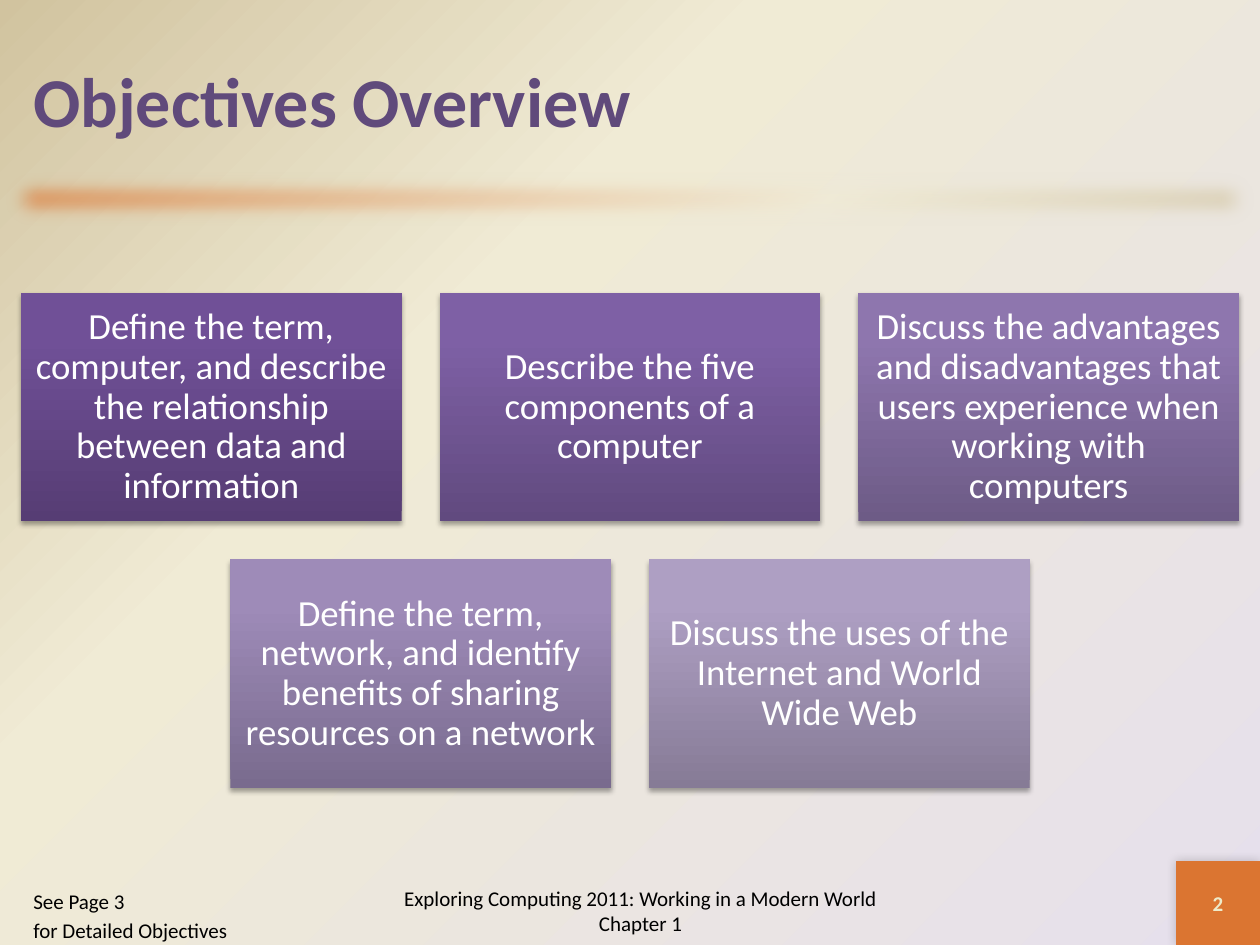
from lxml.etree import SubElement
from pptx import Presentation
from pptx.dml.color import RGBColor
from pptx.enum.shapes import MSO_SHAPE
from pptx.enum.text import MSO_ANCHOR, PP_ALIGN
from pptx.oxml.ns import qn
from pptx.util import Emu, Pt

EMU_PER_PX = 914400 / 126
FONT = "Calibri"

ORANGE = RGBColor(0xDB, 0x75, 0x31)
CREAM = RGBColor(0xF0, 0xEB, 0xD5)
TAN = RGBColor(0xD1, 0xC3, 0x9F)
LAVENDER = RGBColor(0xE6, 0xE0, 0xEC)
PURPLE = RGBColor(0x60, 0x4A, 0x7B)
PALE = RGBColor(0xEE, 0xEB, 0xCA)
WHITE = RGBColor(0xFF, 0xFF, 0xFF)
BLACK = RGBColor(0x00, 0x00, 0x00)

# Objective text with its gradient, bottom to top
OBJECTIVES = [
    ("Define the term, computer, and describe the relationship between data and information",
     (RGBColor(0x56, 0x3D, 0x74), RGBColor(0x70, 0x50, 0x97), RGBColor(0x70, 0x4F, 0x99))),
    ("Describe the five components of a computer",
     (RGBColor(0x61, 0x4A, 0x7F), RGBColor(0x7E, 0x60, 0xA5), RGBColor(0x7F, 0x60, 0xA7))),
    ("Discuss the advantages and disadvantages that users experience when working with computers",
     (RGBColor(0x6D, 0x5B, 0x86), RGBColor(0x8E, 0x76, 0xAE), RGBColor(0x8E, 0x75, 0xB0))),
    ("Define the term, network, and identify benefits of sharing resources on a network",
     (RGBColor(0x79, 0x6B, 0x8E), RGBColor(0x9E, 0x8B, 0xB8), RGBColor(0x9E, 0x8B, 0xBA))),
    ("Discuss the uses of the Internet and World Wide Web",
     (RGBColor(0x86, 0x7B, 0x96), RGBColor(0xAE, 0x9F, 0xC3), RGBColor(0xAE, 0x9F, 0xC4))),
]


def px(n):
    return Emu(round(n * EMU_PER_PX))


def set_gradient(fill, parent, colors, middle, angle=None):
    """Three-stop gradient: linear at an angle, or round from the bottom right corner."""
    fill.solid()
    solid = parent.find(qn("a:solidFill"))
    grad = parent.makeelement(qn("a:gradFill"), {"rotWithShape": "1"})
    stops = SubElement(grad, qn("a:gsLst"))
    for pos, color in zip((0, middle, 100), colors):
        gs = SubElement(stops, qn("a:gs"), pos=str(pos * 1000))
        SubElement(gs, qn("a:srgbClr"), val=str(color))
    if angle is None:
        focus = SubElement(grad, qn("a:path"), path="circle")
        SubElement(focus, qn("a:fillToRect"), l="100000", t="100000")
    else:
        SubElement(grad, qn("a:lin"), ang=str(angle * 60000), scaled="0")
    parent.replace(solid, grad)


def add_effect(sp, name, **attrs):
    effects = sp._element.spPr.find(qn("a:effectLst"))
    return SubElement(effects, qn(name), {k: str(v) for k, v in attrs.items()})


def add_shadow(sp, blur, dist, direction, opacity):
    shadow = add_effect(sp, "a:outerShdw", blurRad=Pt(blur), dist=Pt(dist),
                        dir=direction * 60000, rotWithShape=0)
    color = SubElement(shadow, qn("a:srgbClr"), val=str(BLACK))
    SubElement(color, qn("a:alpha"), val=str(opacity * 1000))


def add_rect(slide, x, y, w, h):
    sp = slide.shapes.add_shape(MSO_SHAPE.RECTANGLE, px(x), px(y), px(w), px(h))
    sp.shadow.inherit = False
    sp.line.fill.background()
    return sp


def set_text(sp, lines, size, color, bold=False, align=PP_ALIGN.LEFT,
             anchor=MSO_ANCHOR.MIDDLE):
    tf = sp.text_frame
    tf.word_wrap = True
    tf.vertical_anchor = anchor
    tf.text = "\n".join(lines)
    for p in tf.paragraphs:
        p.alignment = align
        p.font.name = FONT
        p.font.size = Pt(size)
        p.font.bold = bold
        p.font.color.rgb = color
    return tf


def add_label(slide, x, y, w, h, lines, size, color, **style):
    box = slide.shapes.add_textbox(px(x), px(y), px(w), px(h))
    return set_text(box, lines, size, color, **style)


def add_header(slide, x, y, w, h):
    # Soft bar under the title
    bar = add_rect(slide, x, y + h - 63, w, 63)
    set_gradient(bar.fill, bar._element.spPr, (ORANGE, CREAM, TAN), 65, 45)
    add_effect(bar, "a:softEdge", rad=Pt(12.5))
    # Title
    add_label(slide, x + 21, y + 21, w - 42, 158, ["Objectives Overview"], 40, PURPLE, bold=True)


def add_card(slide, x, y, w, h, text, colors):
    card = add_rect(slide, x, y, w, h)
    set_gradient(card.fill, card._element.spPr, colors, 80, 270)
    add_shadow(card, 3.1, 1.8, 90, 35)
    tf = set_text(card, [text], 21, WHITE, align=PP_ALIGN.CENTER)
    tf.margin_left = tf.margin_right = tf.margin_top = tf.margin_bottom = px(11)
    tf.paragraphs[0].line_spacing = 0.9


def add_objectives(slide, x, y, w, h):
    columns, gap = 3, 38
    card_w, card_h = (w - 2 * gap) / columns, (h - gap) / 2
    for start in range(0, len(OBJECTIVES), columns):
        row = OBJECTIVES[start:start + columns]
        left = x + (w - len(row) * (card_w + gap) + gap) / 2
        top = y + start // columns * (card_h + gap)
        for i, (text, colors) in enumerate(row):
            add_card(slide, left + i * (card_w + gap), top, card_w, card_h, text, colors)


def add_footer(slide, x, y, w, h):
    # Page reference
    tf = add_label(slide, x + 21, y + 21, 231, h - 21, ["See Page 3", "for Detailed Objectives"],
                   12, BLACK, anchor=MSO_ANCHOR.TOP)
    tf.paragraphs[1].space_before = Pt(2.4)
    # Book title
    add_label(slide, x + 378, y + 15, 525, h - 15,
              ["Exploring Computing 2011: Working in a Modern World Chapter 1"],
              12, BLACK, align=PP_ALIGN.CENTER)
    # Slide number
    badge = add_rect(slide, x + w - h, y, h, h)
    badge.fill.solid()
    badge.fill.fore_color.rgb = ORANGE
    add_shadow(badge, 6, 0, 225, 20)
    set_text(badge, ["2"], 12, PALE, bold=True, align=PP_ALIGN.CENTER)


def main():
    prs = Presentation()
    prs.slide_width, prs.slide_height = px(1260), px(945)
    slide = prs.slides.add_slide(prs.slide_layouts[6])
    fill = slide.background.fill
    fill.solid()
    bg = slide._element.find(".//" + qn("p:bgPr"))
    set_gradient(fill, bg, (LAVENDER, CREAM, TAN), 65)
    add_header(slide, 0, 0, 1260, 231)
    add_objectives(slide, 21, 293, 1218, 495)
    add_footer(slide, 0, 861, 1260, 84)
    prs.save("out.pptx")


if __name__ == "__main__":
    main()
